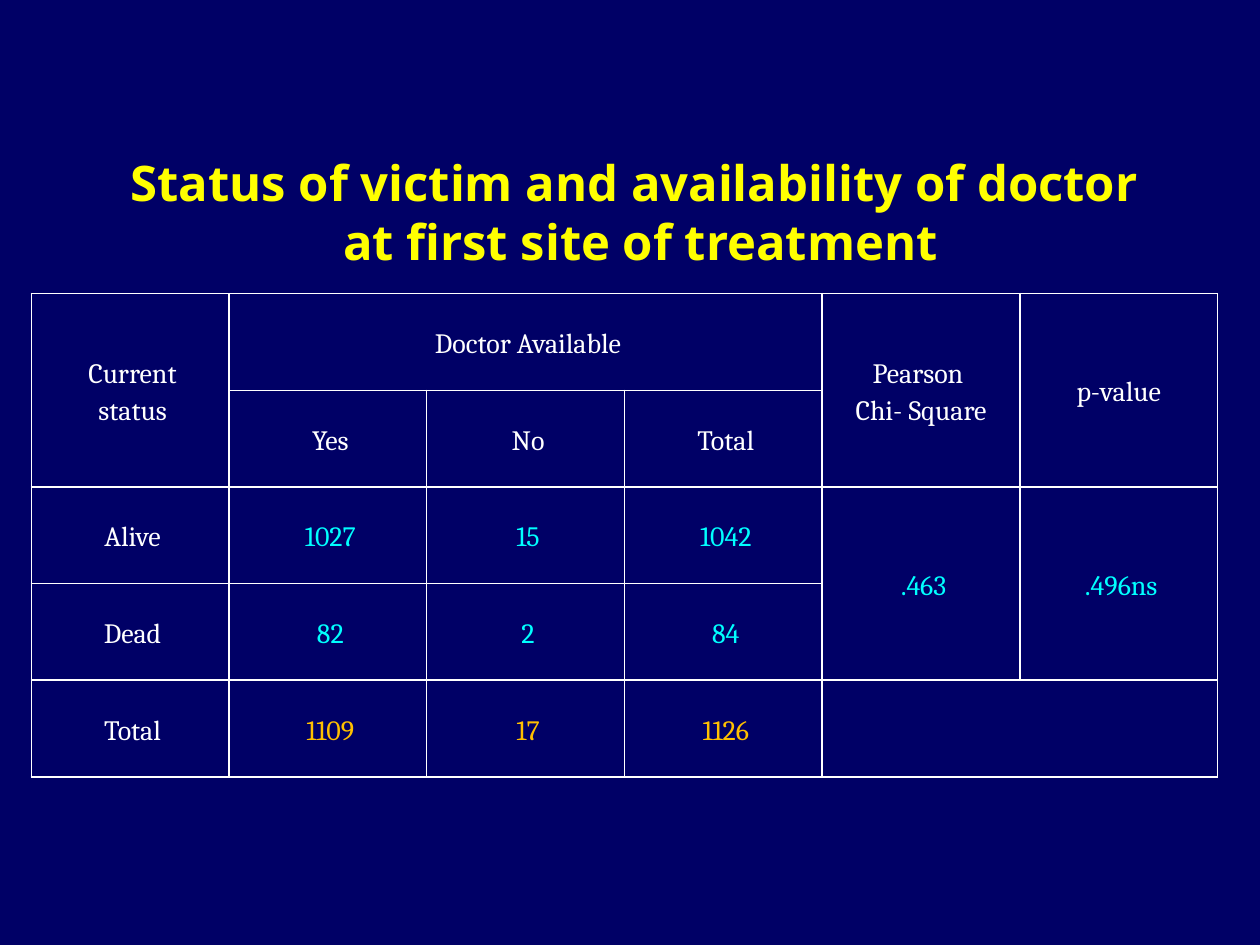
import pptx
import pptx.dml.color
import pptx.enum.text
import pptx.oxml
import pptx.oxml.ns
import pptx.util
from pptx.util import Cm, Pt

NAVY, WHITE, YELLOW, CYAN, AMBER = "000066", "FFFFFF", "FFFF00", "00FFFF", "FFC000"
MIDDLE = pptx.enum.text.MSO_ANCHOR.MIDDLE
CENTER = pptx.enum.text.PP_ALIGN.CENTER

ROWS = [
    ["Current\nstatus", "Doctor Available", "", "", "Pearson \nChi- Square", "p-value"],
    ["", "Yes", "No", "Total", "", ""],
    ["Alive", "1027", "15", "1042", ".463", ".496ns"],
    ["Dead", "82", "2", "84", "", ""],
    ["Total", "1109", "17", "1126", "", ""],
]
VALUE_COLORS = [WHITE, WHITE, CYAN, CYAN, AMBER]
# First and last (row, column) of each merged block
MERGES = [
    ((0, 0), (1, 0)), ((0, 1), (0, 3)), ((0, 4), (1, 4)), ((0, 5), (1, 5)),
    ((2, 4), (3, 4)), ((2, 5), (3, 5)), ((4, 4), (4, 5)),
]


def rgb(color):
    return pptx.dml.color.RGBColor.from_string(color)


def write_lines(tf, text, font, size, color, bold=False, spacing=None, indent=None):
    """Write each line of text as a centred paragraph."""
    for i, line in enumerate(text.split("\n")):
        p = tf.add_paragraph() if i else tf.paragraphs[0]
        p.alignment = CENTER
        if spacing:
            p.line_spacing = spacing
        if indent:
            p._p.get_or_add_pPr().set("marL", str(indent))
        r = p.add_run()
        r.text = line
        r.font.name, r.font.size, r.font.bold = font, Pt(size), bold
        r.font.color.rgb = rgb(color)


def set_borders(cell, color, width):
    tc_pr = cell._tc.get_or_add_tcPr()
    for i, side in enumerate(("lnL", "lnR", "lnT", "lnB")):
        tc_pr.insert(i, pptx.oxml.parse_xml(
            f'<a:{side} {pptx.oxml.ns.nsdecls("a")} w="{Pt(width)}">'
            f'<a:solidFill><a:srgbClr val="{color}"/></a:solidFill></a:{side}>'))


def add_title(s, left, top, width, height):
    tf = s.shapes.add_textbox(left, top, width, height).text_frame
    tf.word_wrap = True
    tf.vertical_anchor = MIDDLE
    write_lines(tf, "Status of victim and availability of doctor \nat first site of treatment",
                "Open Sans", 28, YELLOW, bold=True)


def add_status_table(s, left, top, width, height):
    n_rows, n_cols = len(ROWS), len(ROWS[0])
    table = s.shapes.add_table(n_rows, n_cols, left, top, width, height).table
    table.first_row = table.horz_banding = False
    for first, last in MERGES:
        table.cell(*first).merge(table.cell(*last))
    for i, row in enumerate(ROWS):
        for j, text in enumerate(row):
            cell = table.cell(i, j)
            cell.fill.background()
            set_borders(cell, WHITE, 1)
            cell.vertical_anchor = MIDDLE
            cell.margin_left = cell.margin_right = cell.margin_top = cell.margin_bottom = 0
            if text:
                indent = None if i == 0 and j >= 4 else Cm(0.1)
                write_lines(cell.text_frame, text, "Cambria", 16,
                            VALUE_COLORS[i] if j else WHITE, spacing=1.15, indent=indent)


def main():
    prs = pptx.Presentation()
    prs.slide_width, prs.slide_height = Cm(25.4), Cm(19.05)
    s = prs.slides.add_slide(prs.slide_layouts[6])
    s.background.fill.solid()
    s.background.fill.fore_color.rgb = rgb(NAVY)
    add_status_table(s, Cm(0.63), Cm(5.92), Cm(23.92), Cm(9.74))
    add_title(s, Cm(1.48), Cm(2.93), Cm(22.86), Cm(2.65))
    prs.save("out.pptx")


if __name__ == "__main__":
    main()
